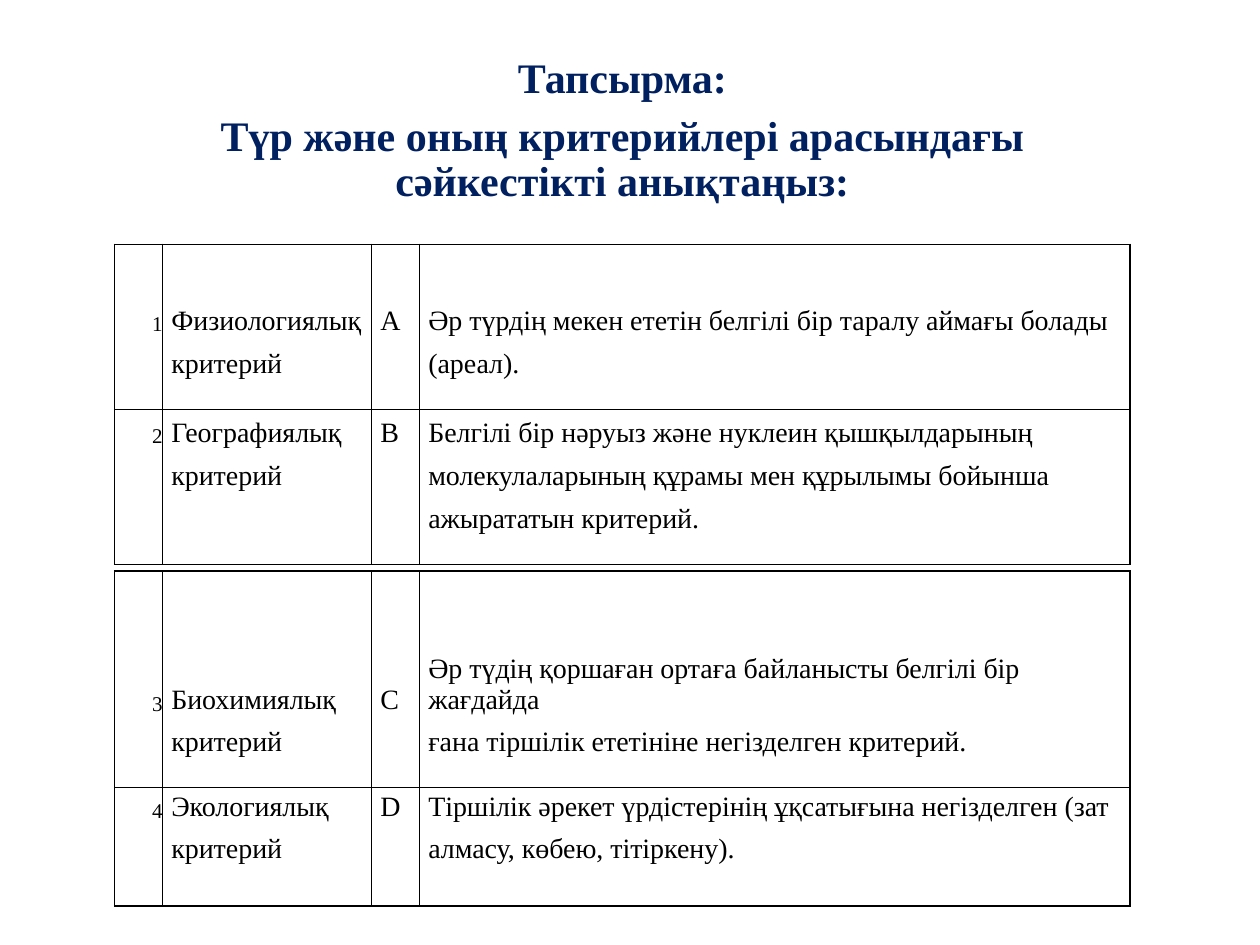
"""Build a task slide that matches species criteria with their definitions."""
from lxml.etree import SubElement
from pptx import Presentation
from pptx.dml.color import RGBColor
from pptx.enum.text import MSO_ANCHOR, MSO_AUTO_SIZE, PP_ALIGN
from pptx.oxml.ns import qn
from pptx.util import Inches, Pt

THEME = {
    "font": "Times New Roman",
    "title": "002060",
    "ink": "000000",
    "head": 24,
    "body": 16,
    "num": 12,
    "line": 1,
}
LEFT, WIDTH = 0.91, 8.06
COLS = [0.38, 1.66, 0.38, 5.64]
BLANK = ["", "", "", ""]
TABLES = [
    (1.94, [
        (0.73, None, ["1", "Физиологиялық", "A",
                      "Әр түрдің мекен ететін белгілі бір таралу аймағы болады"]),
        (0.34, None, ["", "критерий", "", "(ареал)."]),
        (0.24, None, BLANK),
        (0.31, 12.8, ["2", "Географиялық", "B",
                      "Белгілі бір нәруыз және нуклеин қышқылдарының"]),
        (0.34, None, ["", "критерий", "",
                      "молекулаларының құрамы мен құрылымы бойынша"]),
        (0.34, None, ["", "", "", "ажырататын критерий."]),
        (0.24, None, BLANK),
    ]),
    (4.53, [
        (1.15, None, ["3", "Биохимиялық", "C",
                      "Әр түдің қоршаған ортаға байланысты белгілі бір жағдайда"]),
        (0.33, 13.7, ["", "критерий", "",
                      "ғана тіршілік ететініне негізделген критерий."]),
        (0.24, None, BLANK),
        (0.28, 12.9, ["4", "Экологиялық", "D",
                      "Тіршілік әрекет үрдістерінің ұқсатығына негізделген (зат"]),
        (0.33, 13.7, ["", "критерий", "", "алмасу, көбею, тітіркену)."]),
        (0.33, None, BLANK),
    ]),
]


def write(para, text, size, color=THEME["ink"], bold=False,
          align=PP_ALIGN.LEFT, space=None, before=0):
    para.alignment = align
    para.line_spacing = space
    para.space_before = Pt(before)
    if not text:
        para._p.get_or_add_endParaRPr().set("sz", str(size * 100))
        return
    run = para.add_run()
    run.text = text
    font = run.font
    font.name, font.size, font.bold = THEME["font"], Pt(size), bold
    font.color.rgb = RGBColor.from_string(color)


def edge(cell, side, drawn):
    line = SubElement(cell._tc.get_or_add_tcPr(), qn(f"a:ln{side}"),
                      w=str(Pt(THEME["line"])))
    if drawn:
        fill = SubElement(line, qn("a:solidFill"))
        SubElement(fill, qn("a:srgbClr"), val=THEME["ink"])
    else:
        SubElement(line, qn("a:noFill"))


deck = Presentation()
deck.slide_width, deck.slide_height = Inches(10), Inches(7.5)
slide = deck.slides.add_slide(deck.slide_layouts[5])

title = slide.shapes.title
title.left, title.top = Inches(LEFT), Inches(0.4)
title.width, title.height = Inches(WIDTH), Inches(5.31)
frame = title.text_frame
frame.word_wrap = True
frame.auto_size = MSO_AUTO_SIZE.NONE
frame.vertical_anchor = MSO_ANCHOR.TOP
heads = ["Тапсырма:",
         "Түр және оның критерийлері арасындағы сәйкестікті анықтаңыз:"]
for i, text in enumerate(heads):
    para = frame.add_paragraph() if i else frame.paragraphs[0]
    write(para, text, THEME["head"], color=THEME["title"], bold=True,
          align=PP_ALIGN.CENTER, space=0.9, before=7.5)

for top, rows in TABLES:
    high = sum(row[0] for row in rows)
    table = slide.shapes.add_table(len(rows), len(COLS), Inches(LEFT), Inches(top),
                                   Inches(WIDTH), Inches(high)).table
    table.first_row = table.horz_banding = False
    for col, wide in zip(table.columns, COLS):
        col.width = Inches(wide)
    for r, (tall, space, texts) in enumerate(rows):
        table.rows[r].height = Inches(tall)
        for c, text in enumerate(texts):
            cell = table.cell(r, c)
            cell.margin_left = Inches(0.07 if c else 0)
            cell.margin_right = cell.margin_top = cell.margin_bottom = 0
            cell.vertical_anchor = MSO_ANCHOR.BOTTOM
            first, last = bool(texts[0]), not any(texts)
            for side, drawn in zip("LRTB", (True, True, first, last)):
                edge(cell, side, drawn)
            cell.fill.background()
            size = THEME["body"] if c and text else THEME["num"]
            write(cell.text_frame.paragraphs[0], text, size,
                  align=PP_ALIGN.LEFT if c else PP_ALIGN.RIGHT,
                  space=Pt(space) if space else None)

deck.save("out.pptx")
